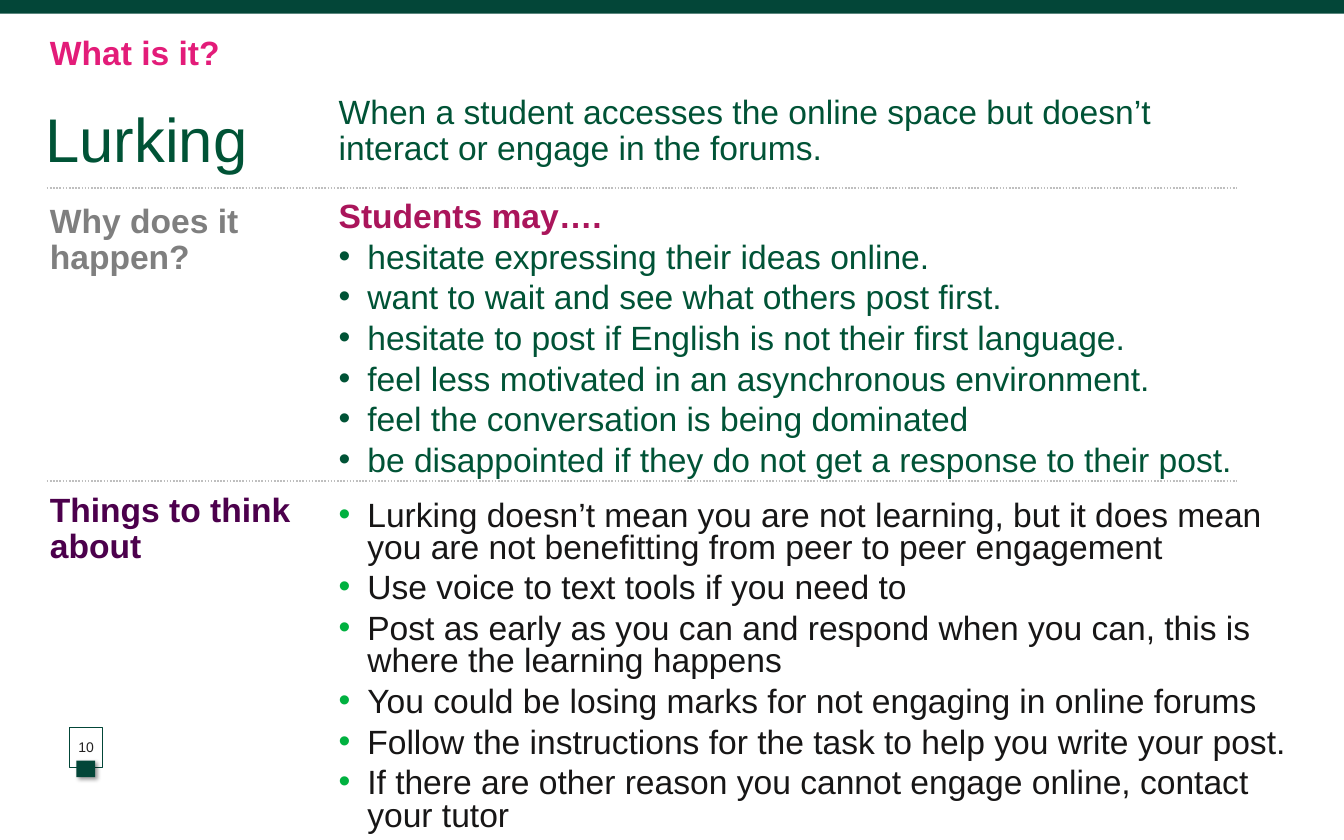
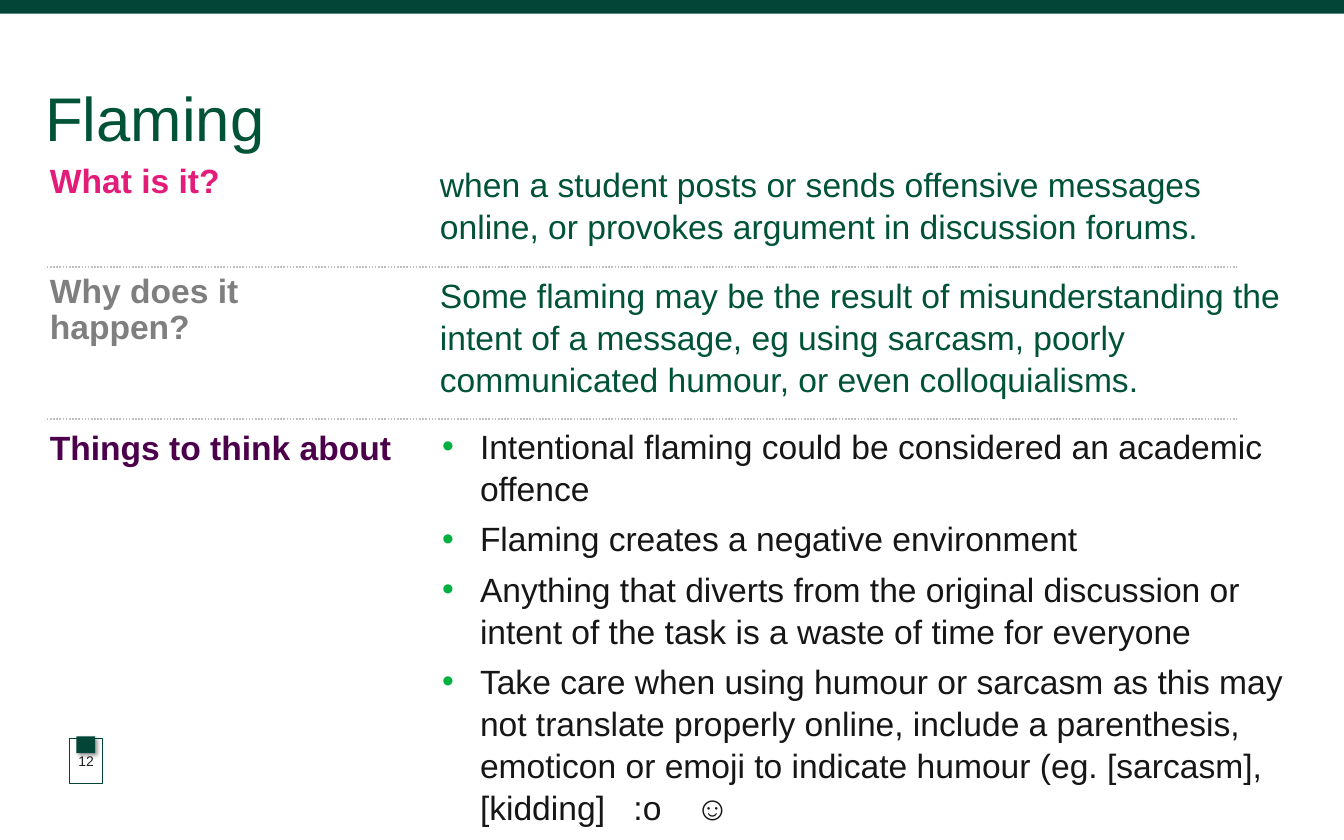
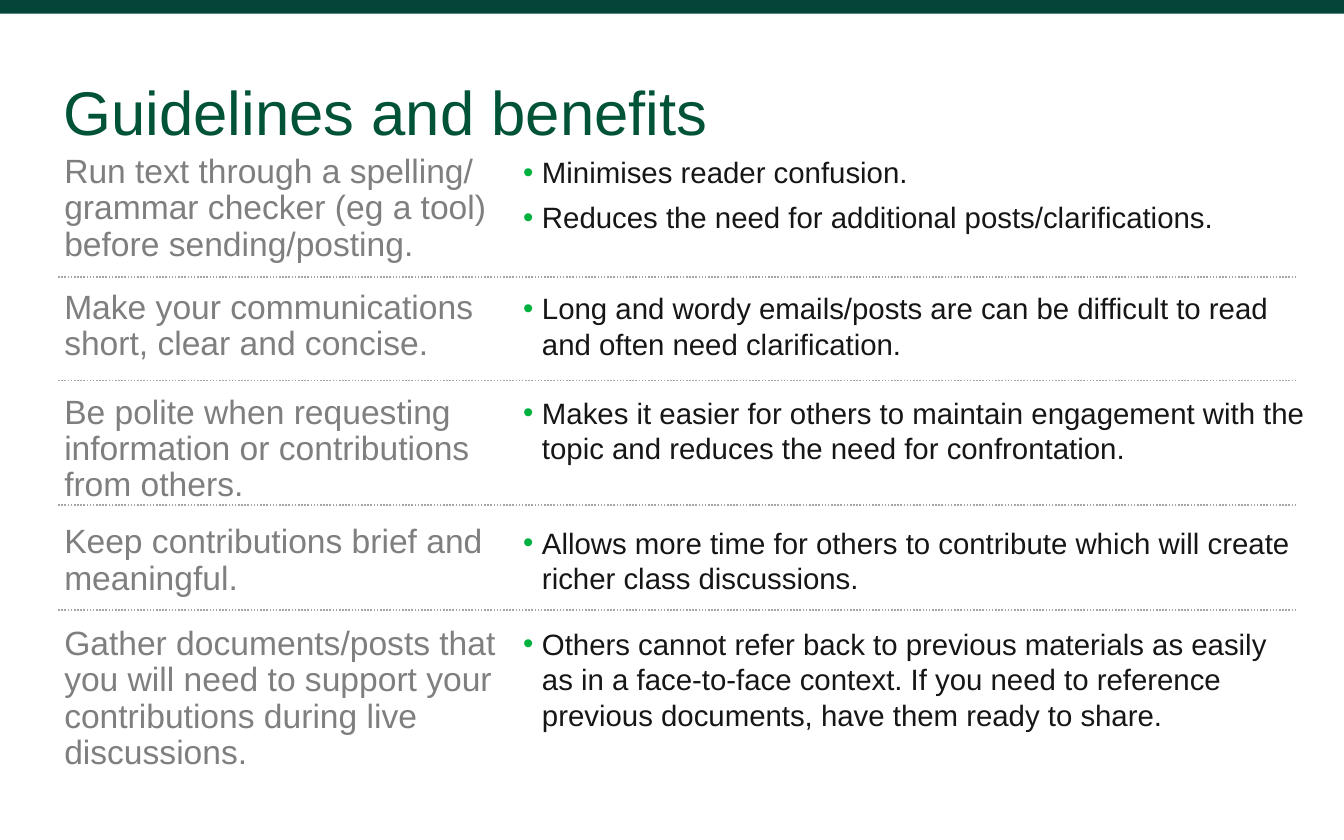
from dataclasses import dataclass, replace

from lxml import etree
from pptx import Presentation
from pptx import util as u
from pptx.dml.color import RGBColor
from pptx.enum import dml, shapes, text
from pptx.oxml.ns import qn

In = u.Inches


@dataclass(frozen=True)
class Theme:
    font: str = "Arial"
    band: str = "034638"
    green: str = "005336"
    pink: str = "E31C79"
    plum: str = "AA155B"
    purple: str = "4C004C"
    grey: str = "7F7F7F"
    ink: str = "171616"
    digit: str = "232121"
    dot: str = "00B140"
    pale: str = "BFBFBF"
    rule: str = "A6A6A6"
    white: str = "FFFFFF"
    title: float = 58.7
    large: float = 32
    small: float = 28
    tiny: float = 13.3


T = Theme()


@dataclass(frozen=True)
class Style:
    color: str
    size: float = T.large
    bold: bool = False
    line: object = 1.0
    after: float = 0
    indent: float = 0
    dot: str = ""
    align: object = text.PP_ALIGN.LEFT
    tabs: tuple = ()


LABEL = Style(T.grey, bold=True, line=0.9)
TIGHT = Style(T.green, line=0.8, after=8)
LOOSE = Style(T.green, line=u.Pt(40), after=8)
TIP = Style(T.ink, T.small, after=9.3, indent=0.25, dot=T.dot)

BODY = (0.1, 0.05)
WIDE = (0.13, 0.07)
MID = text.MSO_ANCHOR.MIDDLE
TOP = text.MSO_ANCHOR.TOP
LEFT = 0.53


def rgb(code):
    return RGBColor.from_string(code)


def sub(parent, tag, **attrs):
    return etree.SubElement(parent, qn(tag), {k: str(v) for k, v in attrs.items()})


def mark(para, style):
    """Set the indent, bullet and tab stops of a paragraph."""
    props = para._p.get_or_add_pPr()
    props.set("marL", str(In(style.indent)))
    props.set("indent", str(-In(style.indent)))
    if style.dot:
        sub(sub(props, "a:buClr"), "a:srgbClr", val=style.dot)
        sub(props, "a:buFont", typeface=T.font)
        sub(props, "a:buChar", char="•")
    else:
        sub(props, "a:buNone")
    if style.tabs:
        stops = sub(props, "a:tabLst")
        for stop in style.tabs:
            sub(stops, "a:tab", pos=In(stop), algn="l")


def write(shape, items, inset=BODY, anchor=TOP):
    """Fill a shape with (text, style) paragraphs."""
    frame = shape.text_frame
    frame.word_wrap = True
    frame.auto_size = text.MSO_AUTO_SIZE.NONE
    frame.vertical_anchor = anchor
    frame.margin_left = frame.margin_right = In(inset[0])
    frame.margin_top = frame.margin_bottom = In(inset[1])
    for i, (words, style) in enumerate(items):
        para = frame.add_paragraph() if i else frame.paragraphs[0]
        para.text = words
        mark(para, style)
        para.alignment = style.align
        para.line_spacing = style.line
        para.space_before = u.Pt(0)
        para.space_after = u.Pt(style.after)
        for run in para.runs:
            font = run.font
            font.name, font.size, font.bold = T.font, u.Pt(style.size), style.bold
            font.color.rgb = rgb(style.color)


def place(shape, box):
    shape.left, shape.top, shape.width, shape.height = map(In, box)
    return shape


def note(slide, box):
    return slide.shapes.add_textbox(*map(In, box))


def head(slide, words, left, top):
    shape = place(slide.shapes.title, (left, top, 15.9, 1.03))
    write(shape, [(words, Style(T.green, T.title))], (0.07, 0.1))


def rect(slide, box, fill, line=None):
    shape = slide.shapes.add_shape(shapes.MSO_SHAPE.RECTANGLE, *map(In, box))
    shape.shadow.inherit = False
    shape.fill.solid()
    shape.fill.fore_color.rgb = rgb(fill)
    if line:
        shape.line.color.rgb = rgb(line)
        shape.line.width = u.Pt(0.75)
    else:
        shape.line.fill.background()
    return shape


def rule(slide, left, right, top, color):
    line = slide.shapes.add_connector(
        shapes.MSO_CONNECTOR.STRAIGHT, In(left), In(top), In(right), In(top))
    line.line.color.rgb = rgb(color)
    line.line.width = u.Pt(1.5)
    line.line.dash_style = dml.MSO_LINE.ROUND_DOT
    sub(line.element.spPr, "a:effectLst")


def badge(slide, number, top, height, tab):
    """Draw the page number frame and its small shaded square."""
    frame = rect(slide, (0.92, top, 0.44, height), T.white, T.band)
    style = Style(T.digit, T.tiny, align=text.PP_ALIGN.CENTER)
    write(frame, [(number, style)], (0, 0.05), MID)
    square = rect(slide, (1.01, tab, 0.25, 0.22), T.band)
    effect = square.element.spPr.find(qn("a:effectLst"))
    shade = sub(effect, "a:outerShdw", blurRad=u.Pt(4), dist=u.Pt(3),
                dir=45 * 60000, algn="tl", rotWithShape=0)
    sub(sub(shade, "a:srgbClr", val="000000"), "a:alpha", val=40000)


def topic(deck, name, top, rows, rules):
    """Add a slide with three labelled rows; the first two use placeholders."""
    slide = deck.slides.add_slide(deck.slide_layouts.get_by_name("Comparison"))
    head(slide, name, LEFT, top)
    slots = [s for s in slide.placeholders if s.placeholder_format.idx]
    colors = T.pink, T.grey, T.purple
    labels = "What is it?", "Why does it happen?", "Things to think about"
    for i, (size, box, items) in enumerate(rows):
        y, width, height = size
        spot = LEFT, y, width, height
        if i < 2:
            label, body = (place(s, b) for s, b in
                           zip(slots[2 * i:2 * i + 2], (spot, box)))
        else:
            label, body = note(slide, spot), note(slide, box)
        write(label, [(labels[i], replace(LABEL, color=colors[i]))], WIDE, MID)
        write(body, items, BODY if i < 2 else WIDE)
    for y in rules:
        rule(slide, 0.62, 16.37, y, T.pale)
    return slide


def lurking(deck):
    point = replace(TIGHT, indent=0.38, dot=T.green)
    think = replace(point, color=T.ink, dot=T.dot)
    reasons = [
        "hesitate expressing their ideas online.",
        "want to wait and see what others post first.",
        "hesitate to post if English is not their first language.",
        "feel less motivated in an asynchronous environment.",
        "feel the conversation is being dominated",
        "be disappointed if they do not get a response to their post.",
    ]
    ideas = [
        "Lurking doesn’t mean you are not learning, but it does mean you are "
        "not benefitting from peer to peer engagement",
        "Use voice to text tools if you need to",
        "Post as early as you can and respond when you can, this is where the "
        "learning happens",
        "You could be losing marks for not engaging in online forums",
        "Follow the instructions for the task to help you write your post.",
        "If there are other reason you cannot engage online, contact your tutor",
    ]
    rows = [
        ((0.41, 5.56, 0.62), (4.38, 1.21, 11.98, 1.09),
         [("When a student accesses the online space but doesn’t interact or "
           "engage in the forums.", replace(TIGHT, line=0.9))]),
        ((2.63, 4.72, 1.1), (4.38, 2.63, 12.87, 3.31),
         [("Students may….", replace(TIGHT, color=T.plum, bold=True))]
         + [(words, point) for words in reasons]),
        ((6.56, 4.36, 0.89), (4.35, 6.56, 12.87, 4.5),
         [(words, think) for words in ideas]),
    ]
    slide = topic(deck, "Lurking", 1.24, rows, (2.49, 6.36))
    badge(slide, "10", 9.62, 0.53, 10.06)
    return slide


def flaming(deck):
    think = replace(LOOSE, color=T.ink, indent=0.5, dot=T.dot)
    ideas = [
        "Intentional flaming could be considered an academic offence",
        "Flaming creates a negative environment",
        "Anything that diverts from the original discussion or intent of the "
        "task is a waste of time for everyone",
    ]
    last = ("Take care when using humour or sarcasm as this may not translate "
            "properly online, include a parenthesis, emoticon or emoji to "
            "indicate humour (eg. [sarcasm], [kidding]\t:o\t☺")
    rows = [
        ((2.1, 5.56, 0.62), (5.72, 2.1, 11.45, 1.2),
         [("when a student posts or sends offensive messages online, or "
           "provokes argument in discussion forums.", LOOSE)]),
        ((3.56, 4.72, 1.1), (5.72, 3.56, 11.45, 1.9),
         [("Some flaming may be the result of misunderstanding the intent of a "
           "message, eg using sarcasm, poorly communicated humour, or even "
           "colloquialisms.", LOOSE)]),
        ((5.54, 5.28, 0.82), (5.72, 5.54, 11.68, 5.5),
         [(words, think) for words in ideas]
         + [(last, replace(think, tabs=(2.53, 3.35)))]),
    ]
    slide = topic(deck, "Flaming", 0.96, rows, (3.53, 5.54))
    badge(slide, "12", 9.77, 0.59, 9.74)


def guide(deck):
    slide = deck.slides.add_slide(deck.slide_layouts.get_by_name("Title Only"))
    head(slide, "Guidelines and benefits", 0.77, 0.88)
    advice = replace(LABEL, bold=False)
    rows = [
        (1.97, 1.59, "Run text through a spelling/ grammar checker (eg a tool) "
         "before sending/posting.",
         ["Minimises reader confusion.",
          "Reduces the need for additional posts/clarifications."]),
        (3.77, 1.1, "Make your communications short, clear and concise.",
         ["Long and wordy emails/posts are can be difficult to read and often "
          "need clarification."]),
        (5.15, 1.59, "Be polite when requesting information or contributions "
         "from others.",
         ["Makes it easier for others to maintain engagement with the topic "
          "and reduces the need for confrontation."]),
        (6.87, 1.1, "Keep contributions brief and meaningful.",
         ["Allows more time for others to contribute which will create richer "
          "class discussions."]),
        (8.21, 2.07, "Gather documents/posts that you will need to support "
         "your contributions during live discussions.",
         ["Others cannot refer back to previous materials as easily as in a "
          "face-to-face context. If you need to reference previous documents, "
          "have them ready to share."]),
    ]
    for top, height, words, gains in rows:
        write(note(slide, (0.72, top, 6.08, height)), [(words, advice)], WIDE, MID)
        write(note(slide, (6.79, top, 10.61, 1.6)), [(g, TIP) for g in gains], WIDE)
    for y in (3.66, 5.03, 6.68, 8.07):
        rule(slide, 0.77, 17.15, y, T.rule)


def main():
    deck = Presentation()
    deck.slide_width, deck.slide_height = In(17.78), In(11.11)
    first = lurking(deck)
    band = rect(first, (0, 0, 17.78, 0.18), T.band)
    deck.slide_master.shapes.element.insert(2, band.element)
    flaming(deck)
    guide(deck)
    deck.save("out.pptx")


if __name__ == "__main__":
    main()
